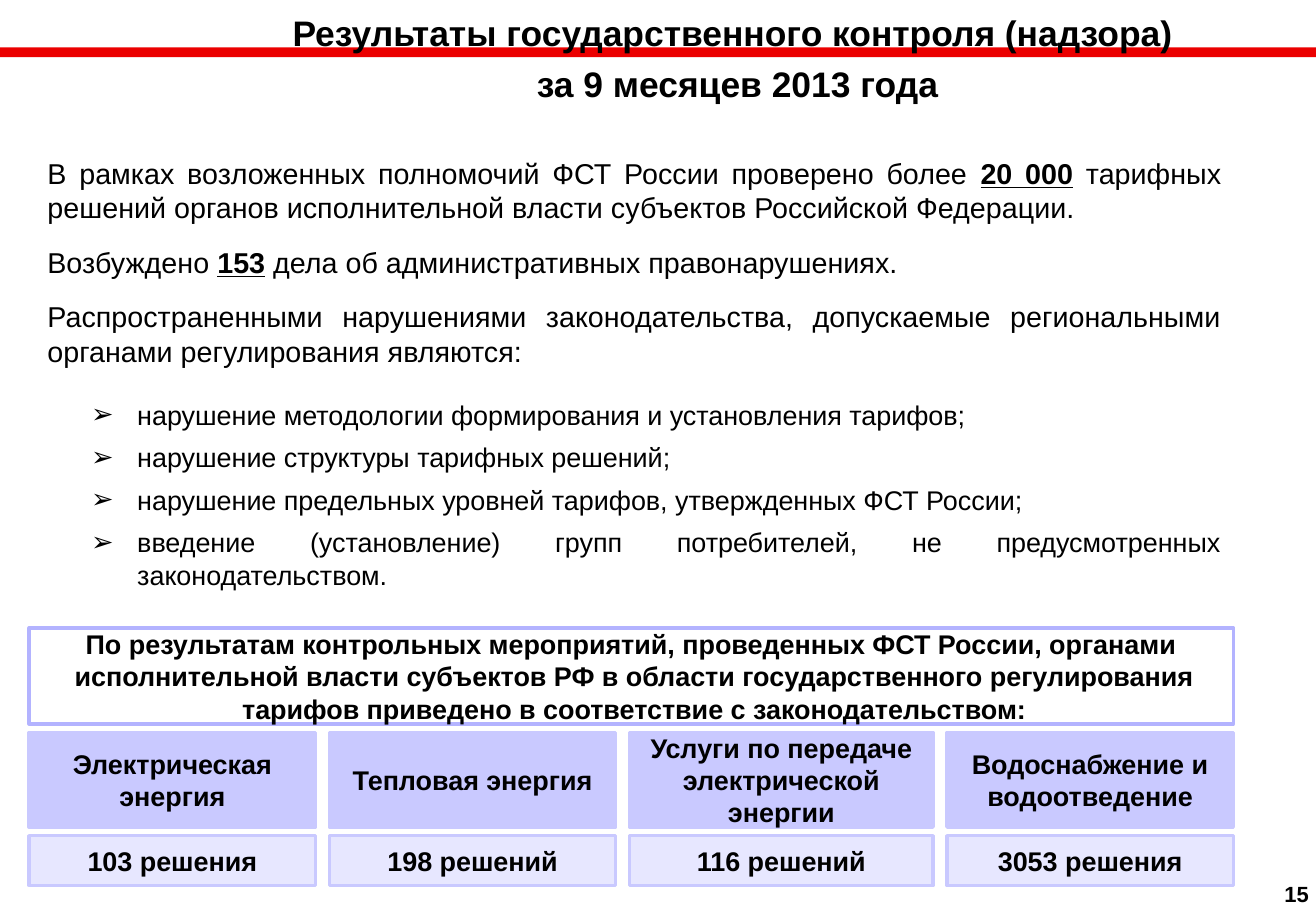
from lxml.etree import SubElement
from pptx import Presentation
from pptx.dml.color import RGBColor
from pptx.enum.shapes import MSO_SHAPE
from pptx.enum.text import MSO_ANCHOR, MSO_AUTO_SIZE, PP_ALIGN
from pptx.oxml.ns import qn
from pptx.util import Inches, Pt

BLACK = RGBColor(0x00, 0x00, 0x00)
RED = RGBColor(0xEB, 0x00, 0x00)
LILAC = RGBColor(0xC9, 0xC9, 0xFF)
PALE_LILAC = RGBColor(0xE7, 0xE7, 0xFF)
FRAME_LILAC = RGBColor(0xB3, 0xB3, 0xFF)

FONT = "Arial"
SLIDE_WIDTH, SLIDE_HEIGHT = 10.84, 7.5
LEFT, CONTENT_WIDTH = 0.24, 9.92
COLUMN_WIDTHS = (2.36, 2.36, 2.5, 2.36)
COLUMN_GAP = (CONTENT_WIDTH - sum(COLUMN_WIDTHS)) / (len(COLUMN_WIDTHS) - 1)
SUMMARY_ROW, HEADING_ROW, RESULT_ROW = (5.17, 0.79), (6.03, 0.78), (6.88, 0.41)

TITLE = ("Результаты государственного контроля (надзора) ", "за 9 месяцев 2013 года")
# Each statement: space after, then pieces of text; every second piece is a figure
STATEMENTS = (
    (12, ("В рамках возложенных полномочий ФСТ России проверено более ", "20 000",
          " тарифных решений органов исполнительной власти субъектов Российской Федерации.")),
    (12, ("Возбуждено ", "153", " дела об административных правонарушениях.")),
    (18, ("Распространенными нарушениями законодательства, допускаемые "
          "региональными органами регулирования являются:",)),
)
VIOLATIONS = (
    "нарушение методологии формирования и установления тарифов;",
    "нарушение структуры тарифных решений;",
    "нарушение предельных уровней тарифов, утвержденных ФСТ России;",
    "введение (установление) групп потребителей, не предусмотренных законодательством.",
)
SUMMARY = ("По результатам контрольных мероприятий, проведенных ФСТ России, органами "
           "исполнительной власти субъектов РФ в области государственного регулирования "
           "тарифов приведено в соответствие с законодательством:")
RESULTS = (
    ("Электрическая энергия", "103 решения"),
    ("Тепловая энергия", "198 решений"),
    ("Услуги по передаче электрической энергии", "116 решений"),
    ("Водоснабжение и водоотведение", "3053 решения"),
)


def place(shape, left, top, width, height):
    shape.left, shape.top = Inches(left), Inches(top)
    shape.width, shape.height = Inches(width), Inches(height)


def add_run(paragraph, text, size, bold=False, underline=False):
    run = paragraph.add_run()
    run.text = text
    run.font.name = FONT
    run.font.size = Pt(size)
    run.font.bold = bold
    run.font.underline = underline
    run.font.color.rgb = BLACK


def next_paragraph(text_frame):
    """Return the empty first paragraph, or a new one after it."""
    first = text_frame.paragraphs[0]
    return text_frame.add_paragraph() if first.runs else first


def set_indent(paragraph, margin, indent, bullet=None):
    properties = paragraph._p.get_or_add_pPr()
    properties.set("marL", str(Inches(margin)))
    properties.set("indent", str(Inches(indent)))
    if bullet:
        SubElement(properties, qn("a:buFont"), typeface=FONT)
        SubElement(properties, qn("a:buChar"), char=bullet)
    else:
        SubElement(properties, qn("a:buNone"))


def add_box(slide, left, row, width, fill=None, line=None, text=None):
    top, height = row
    box = slide.shapes.add_shape(MSO_SHAPE.RECTANGLE, Inches(left), Inches(top),
                                 Inches(width), Inches(height))
    box.shadow.inherit = False
    if fill is None:
        box.fill.background()
    else:
        box.fill.solid()
        box.fill.fore_color.rgb = fill
    if line is None:
        box.line.fill.background()
    else:
        box.line.color.rgb = line
        box.line.width = Pt(2)
    if text:
        box.text_frame.word_wrap = True
        box.text_frame.vertical_anchor = MSO_ANCHOR.MIDDLE
        paragraph = box.text_frame.paragraphs[0]
        paragraph.alignment = PP_ALIGN.CENTER
        add_run(paragraph, text, 16, bold=True)
    return box


def fill_title(title):
    place(title, 1.32, -0.03, 9.51, 0.91)
    text_frame = title.text_frame
    text_frame.auto_size = MSO_AUTO_SIZE.NONE
    text_frame.vertical_anchor = MSO_ANCHOR.TOP
    for line in TITLE:
        paragraph = next_paragraph(text_frame)
        paragraph.alignment = PP_ALIGN.CENTER
        paragraph.line_spacing = 1.2
        add_run(paragraph, line, 21, bold=True)


def add_body_paragraph(text_frame, space_after, margin, indent, bullet=None):
    paragraph = next_paragraph(text_frame)
    set_indent(paragraph, margin, indent, bullet)
    paragraph.alignment = PP_ALIGN.JUSTIFY
    paragraph.space_before = Pt(0)
    paragraph.space_after = Pt(space_after)
    return paragraph


def fill_body(body):
    place(body, LEFT, 1.23, CONTENT_WIDTH, 3.78)
    text_frame = body.text_frame
    text_frame.auto_size = MSO_AUTO_SIZE.NONE
    for space_after, pieces in STATEMENTS:
        paragraph = add_body_paragraph(text_frame, space_after, 0.05, 0)
        for index, piece in enumerate(pieces):
            is_figure = index % 2 == 1
            add_run(paragraph, piece, 17, bold=is_figure, underline=is_figure)
    for violation in VIOLATIONS:
        space_after = 12 if violation == VIOLATIONS[-1] else 6
        paragraph = add_body_paragraph(text_frame, space_after, 0.79, -0.38, "➢")
        add_run(paragraph, violation, 16)


def add_results(slide):
    summary = add_box(slide, LEFT, SUMMARY_ROW, CONTENT_WIDTH,
                      line=FRAME_LILAC, text=SUMMARY)
    set_indent(summary.text_frame.paragraphs[0], 0.05, -0.05)
    left = LEFT
    for width, (heading, result) in zip(COLUMN_WIDTHS, RESULTS):
        add_box(slide, left, HEADING_ROW, width, LILAC, LILAC, heading)
        add_box(slide, left, RESULT_ROW, width, PALE_LILAC, LILAC, result)
        left += width + COLUMN_GAP


def add_page_number(slide, number):
    box = slide.shapes.add_textbox(Inches(10.52), Inches(7.2), Inches(0.32), Inches(0.3))
    text_frame = box.text_frame
    text_frame.margin_left = text_frame.margin_right = 0
    text_frame.word_wrap = True
    paragraph = text_frame.paragraphs[0]
    paragraph.alignment = PP_ALIGN.CENTER
    add_run(paragraph, number, 13, bold=True)


def main():
    presentation = Presentation()
    presentation.slide_width = Inches(SLIDE_WIDTH)
    presentation.slide_height = Inches(SLIDE_HEIGHT)
    slide = presentation.slides.add_slide(presentation.slide_layouts[1])
    title, body = slide.placeholders
    red_band = add_box(slide, 0, (0.39, 0.08), SLIDE_WIDTH, fill=RED)
    title._element.addprevious(red_band._element)
    fill_title(title)
    fill_body(body)
    add_results(slide)
    add_page_number(slide, "15")
    presentation.save("out.pptx")


if __name__ == "__main__":
    main()
